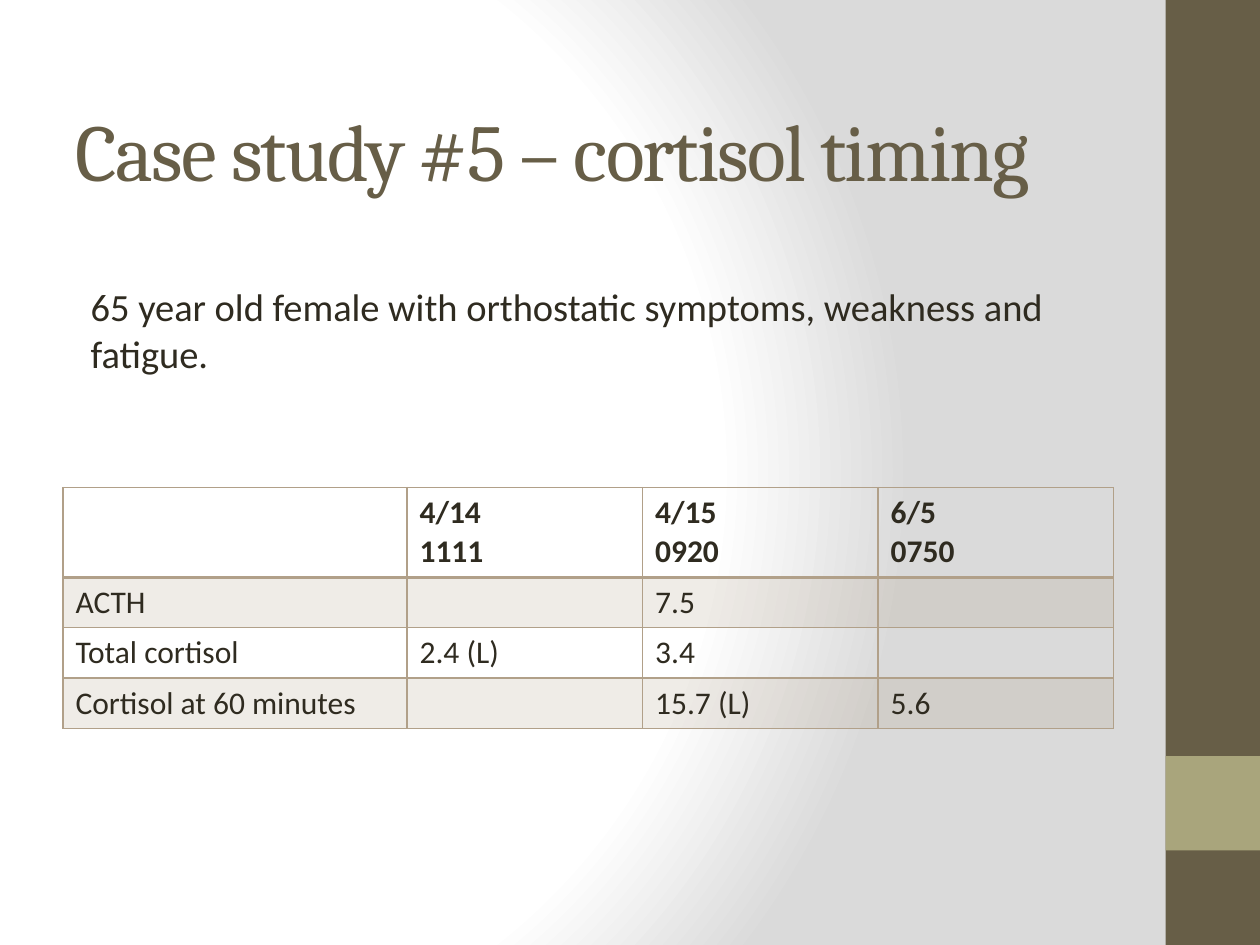
from pptx import Presentation
from pptx.dml.color import RGBColor
from pptx.enum.shapes import MSO_SHAPE as Shape
from pptx.enum.text import MSO_ANCHOR as Anchor, MSO_AUTO_SIZE as AutoSize, PP_ALIGN as Align
from pptx.oxml import parse_xml
from pptx.oxml.ns import nsdecls, qn
from pptx.util import Inches, Pt
from lxml.etree import SubElement

# Content
TITLE = "Case study #5 – cortisol timing"
HISTORY = "65 year old female with orthostatic symptoms, weakness and fatigue."
RESULTS = [
    ["", "4/14\n1111", "4/15\n0920", "6/5\n0750"],
    ["ACTH", "", "7.5", ""],
    ["Total cortisol", "2.4 (L)", "3.4", ""],
    ["Cortisol at 60 minutes", "", "15.7 (L)", "5.6"],
]
COLUMN_WIDTHS = [2.73, 1.87, 1.87, 1.87]
ROW_HEIGHTS = [0.71, 0.4, 0.4, 0.4]
SIDEBAR = [(0, 7.5, "675E47"), (6, 0.75, "A9A57C")]  # top, height, colour
GRADIENT = [(0, "FFFFFF"), (75, "FFFFFF"), (100, "DADADA")]
BROWN, INK, TAN = "675E47", "2F2B20", "B1A089"
LEFT, WIDTH = 0.5, 8.33


def rgb(value):
    return RGBColor.from_string(value)


def style_text(frame, font, size, color, bold=False):
    for para in frame.paragraphs:
        for span in para.runs:
            span.font.name, span.font.size, span.font.bold = font, Pt(size), bold
            span.font.color.rgb = rgb(color)


def set_borders(cell, color, widths):
    properties = cell._tc.get_or_add_tcPr()
    for side, points in zip("LRTB", widths):
        line = SubElement(properties, qn(f"a:ln{side}"), w=str(Pt(points)))
        fill = SubElement(line, qn("a:solidFill"))
        SubElement(fill, qn("a:srgbClr"), val=color)


def set_tint(cell, color, percent):
    cell.fill.solid()
    cell.fill.fore_color.rgb = rgb(color)
    tone = cell._tc.tcPr.find(qn("a:solidFill")).find(qn("a:srgbClr"))
    SubElement(tone, qn("a:alpha"), val=str(percent * 1000))


deck = Presentation()
deck.slide_width, deck.slide_height = Inches(10), Inches(7.5)
page = deck.slides.add_slide(deck.slide_layouts[5])

# Background: circular gradient
stops = "".join(f'<a:gs pos="{position * 1000}"><a:srgbClr val="{color}"/></a:gs>'
                for position, color in GRADIENT)
page.element.cSld.insert(0, parse_xml(
    f'<p:bg {nsdecls("p", "a")}><p:bgPr><a:gradFill rotWithShape="1"><a:gsLst>{stops}</a:gsLst>'
    '<a:path path="circle"><a:fillToRect l="20000" t="50000" r="100000" b="50000"/></a:path>'
    '</a:gradFill><a:effectLst/></p:bgPr></p:bg>'))

# Sidebar
for top, height, color in SIDEBAR:
    band = page.shapes.add_shape(Shape.RECTANGLE, Inches(9.25), Inches(top), Inches(0.75), Inches(height))
    band.shadow.inherit = False
    band.fill.solid()
    band.fill.fore_color.rgb = rgb(color)
    band.line.fill.background()

# Title
title = page.shapes.title
title.left, title.top, title.width, title.height = map(Inches, (LEFT, 0.56, WIDTH, 1.25))
frame = title.text_frame
frame.text = TITLE
frame.auto_size, frame.vertical_anchor = AutoSize.NONE, Anchor.MIDDLE
frame.paragraphs[0].alignment = Align.LEFT
style_text(frame, "Cambria", 46, BROWN)
frame.paragraphs[0].runs[0].font._element.set("spc", "-100")

# Patient history
box = page.shapes.add_textbox(Inches(LEFT), Inches(2.2), Inches(WIDTH), Inches(0.9))
frame = box.text_frame
frame.word_wrap, frame.margin_left = True, Inches(0.22)
frame.text = HISTORY
style_text(frame, "Calibri", 22, INK)

# Results table
table = page.shapes.add_table(len(RESULTS), len(COLUMN_WIDTHS), Inches(LEFT), Inches(3.87),
                              Inches(WIDTH), Inches(sum(ROW_HEIGHTS))).table
table.first_row = table.horz_banding = False
for column, width in zip(table.columns, COLUMN_WIDTHS):
    column.width = Inches(width)
for r, (row, height, values) in enumerate(zip(table.rows, ROW_HEIGHTS, RESULTS)):
    row.height = Inches(height)
    for cell, value in zip(row.cells, values):
        cell.text_frame.text = value
        style_text(cell.text_frame, "Calibri", 18, INK, bold=r == 0)
        set_borders(cell, TAN, (1, 1, 2 if r == 1 else 1, 2 if r == 0 else 1))
        if r % 2:
            set_tint(cell, TAN, 20)
        else:
            cell.fill.background()

deck.save("out.pptx")
